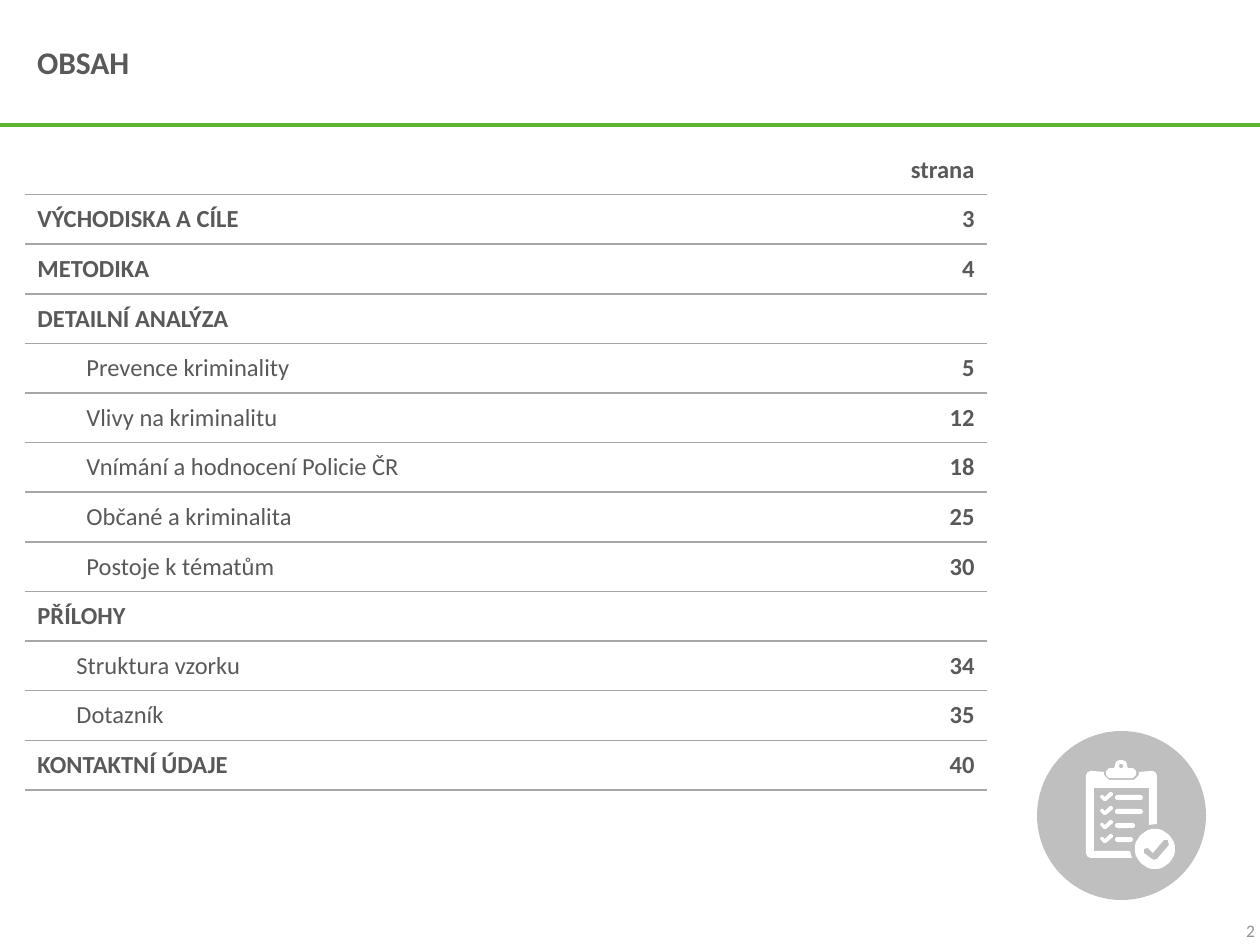
from math import cos, radians, sin

from lxml.etree import SubElement
from pptx import Presentation
from pptx.dml.color import RGBColor
from pptx.enum.shapes import MSO_CONNECTOR, MSO_SHAPE
from pptx.enum.text import MSO_ANCHOR, PP_ALIGN
from pptx.oxml import parse_xml
from pptx.oxml.ns import nsdecls, qn
from pptx.util import Pt

SCALE = 914400 / 126
FONT = "Calibri"
TEXT, RULE, GREEN = "595959", "A6A6A6", "5BB531"
DISC, WHITE, MUTED = "BFBFBF", "FFFFFF", "939393"

# Entry, page, indent in px (None marks a bold heading)
CONTENTS = [
    ("", "strana", None),
    ("VÝCHODISKA A CÍLE", "3", None),
    ("METODIKA", "4", None),
    ("DETAILNÍ ANALÝZA", "", None),
    ("Prevence kriminality", "5", 49),
    ("Vlivy na kriminalitu", "12", 49),
    ("Vnímání a hodnocení Policie ČR", "18", 49),
    ("Občané a kriminalita", "25", 49),
    ("Postoje k tématům", "30", 49),
    ("PŘÍLOHY", "", None),
    ("Struktura vzorku", "34", 39),
    ("Dotazník", "35", 39),
    ("KONTAKTNÍ ÚDAJE", "40", None),
]


def px(length):
    return round(length * SCALE)


def color(value):
    return RGBColor.from_string(value)


def style(para, size, fill, bold=False, align=PP_ALIGN.LEFT):
    para.alignment = align
    font = para.font
    font.name, font.size, font.bold = FONT, Pt(size), bold
    font.color.rgb = color(fill)


def add_text(page, bounds, text, inset=0, anchor=MSO_ANCHOR.TOP):
    """Return the box's only paragraph, ready for styling."""
    box = page.shapes.add_textbox(*map(px, bounds))
    frame = box.text_frame
    frame.word_wrap = True
    frame.vertical_anchor = anchor
    frame.margin_left = frame.margin_right = px(inset)
    frame.margin_top = frame.margin_bottom = 0
    para = frame.paragraphs[0]
    para.text = text
    return para


def add_rule(page, y):
    line = page.shapes.add_connector(
        MSO_CONNECTOR.STRAIGHT, 0, px(y), px(1260), px(y))
    line.line.color.rgb = color(GREEN)
    line.line.width = Pt(2)
    SubElement(line._element.spPr, qn("a:effectLst"))


def set_borders(cell, top, bottom):
    properties = cell._tc.get_or_add_tcPr()
    sides = [("L", False), ("R", False), ("T", top), ("B", bottom)]
    for position, (side, visible) in enumerate(sides):
        paint = (f'<a:solidFill><a:srgbClr val="{RULE}"/></a:solidFill>'
                 if visible else "<a:noFill/>")
        properties.insert(position, parse_xml(
            f'<a:ln{side} {nsdecls("a")} w="{Pt(1)}">{paint}</a:ln{side}>'))


def fill_cell(cell, text, bold, align, indent=0):
    cell.fill.background()
    cell.vertical_anchor = MSO_ANCHOR.MIDDLE
    cell.margin_left = cell.margin_right = px(12) + px(1) // 2
    cell.margin_top = cell.margin_bottom = px(4)
    para = cell.text_frame.paragraphs[0]
    para.text = text
    if indent:
        para._p.get_or_add_pPr().set("marL", str(px(indent)))
    style(para, 14, TEXT, bold, align)


def add_contents(page):
    frame = page.shapes.add_table(
        len(CONTENTS), 2, px(25), px(145), px(962), px(645))
    table = frame.table
    table.first_row = table.horz_banding = False
    for column, width in zip(table.columns, (844, 118)):
        column.width = px(width)
    for index, (entry, number, indent) in enumerate(CONTENTS):
        table.rows[index].height = px(645) // len(CONTENTS)
        label, number_cell = table.rows[index].cells
        fill_cell(label, entry, indent is None, PP_ALIGN.LEFT, indent or 0)
        fill_cell(number_cell, number, True, PP_ALIGN.RIGHT)
        for cell in (label, number_cell):
            set_borders(cell, index > 0, True)


def paint(shape, fill):
    shape.shadow.inherit = False
    shape.fill.solid()
    shape.fill.fore_color.rgb = color(fill)
    shape.line.fill.background()


def add_shape(page, kind, bounds, fill):
    shape = page.shapes.add_shape(kind, *map(px, bounds))
    paint(shape, fill)
    return shape


def add_outline(page, *contours):
    """Draw one white shape; contours after the first are holes."""
    first, *holes = contours
    builder = page.shapes.build_freeform(*first[0], scale=SCALE)
    builder.add_line_segments(first[1:], close=True)
    for hole in holes:
        builder.move_to(*hole[0])
        builder.add_line_segments(hole[1:], close=True)
    paint(builder.convert_to_shape(), WHITE)


def arc(x, y, radius, start, end):
    """Points along an arc, clockwise from the right."""
    steps = max(6, abs(end - start) // 10)
    angles = [radians(start + (end - start) * step / steps)
              for step in range(steps + 1)]
    return [(x + radius * cos(angle), y + radius * sin(angle))
            for angle in angles]


def add_clipboard(page):
    add_shape(page, MSO_SHAPE.OVAL, (1037, 731, 169, 169), DISC)
    add_outline(page, [
        (1130, 851), (1094, 851), (1094, 788), (1149, 788), (1149, 825),
        (1157, 824), *arc(1151, 777, 6, 0, -90),
        *arc(1131, 772, 8, 0, 90), *arc(1112, 772, 8, 90, 180),
        *arc(1092, 777, 6, 270, 180), *arc(1092, 852, 6, 180, 90),
        (1132, 858)])
    add_outline(
        page,
        [*arc(1131, 773, 5, -90, 90), *arc(1111, 773, 5, 90, 270),
         (1114, 768), *arc(1121, 766, 6, 180, 360), (1128, 768)],
        arc(1121, 766, 2, 360, 0))
    tick = [(11, 0), (10, 0), (5, 5), (3, 3), (1, 3),
            (0, 5), (4, 9), (6, 9), (13, 3), (13, 1)]
    for index, width in enumerate((28, 28, 20, 18)):
        top = 792 + 14 * index
        add_outline(page, [(1100 + x, top + y) for x, y in tick])
        bar = add_shape(page, MSO_SHAPE.ROUNDED_RECTANGLE,
                        (1115, top + 3, width, 5), WHITE)
        bar.adjustments[0] = 0.5
    add_outline(
        page, arc(1155, 849, 20, 0, 360),
        [(1169, 845), (1168, 840), (1164, 840), (1153, 853), (1148, 848),
         (1144, 849), (1144, 853), (1152, 859), (1154, 860), (1157, 859)])


def main():
    deck = Presentation()
    deck.slide_width, deck.slide_height = px(1260), px(945)
    page = deck.slides.add_slide(deck.slide_layouts[6])
    add_rule(page, 125)
    add_contents(page)
    add_clipboard(page)
    title = add_text(page, (25, 6, 1042, 118), "OBSAH", 12, MSO_ANCHOR.MIDDLE)
    title.line_spacing = 0.8
    style(title, 18, TEXT, bold=True)
    number = add_text(page, (1121, 920, 134, 21), "2")
    style(number, 10, MUTED, align=PP_ALIGN.RIGHT)
    deck.save("out.pptx")


if __name__ == "__main__":
    main()
